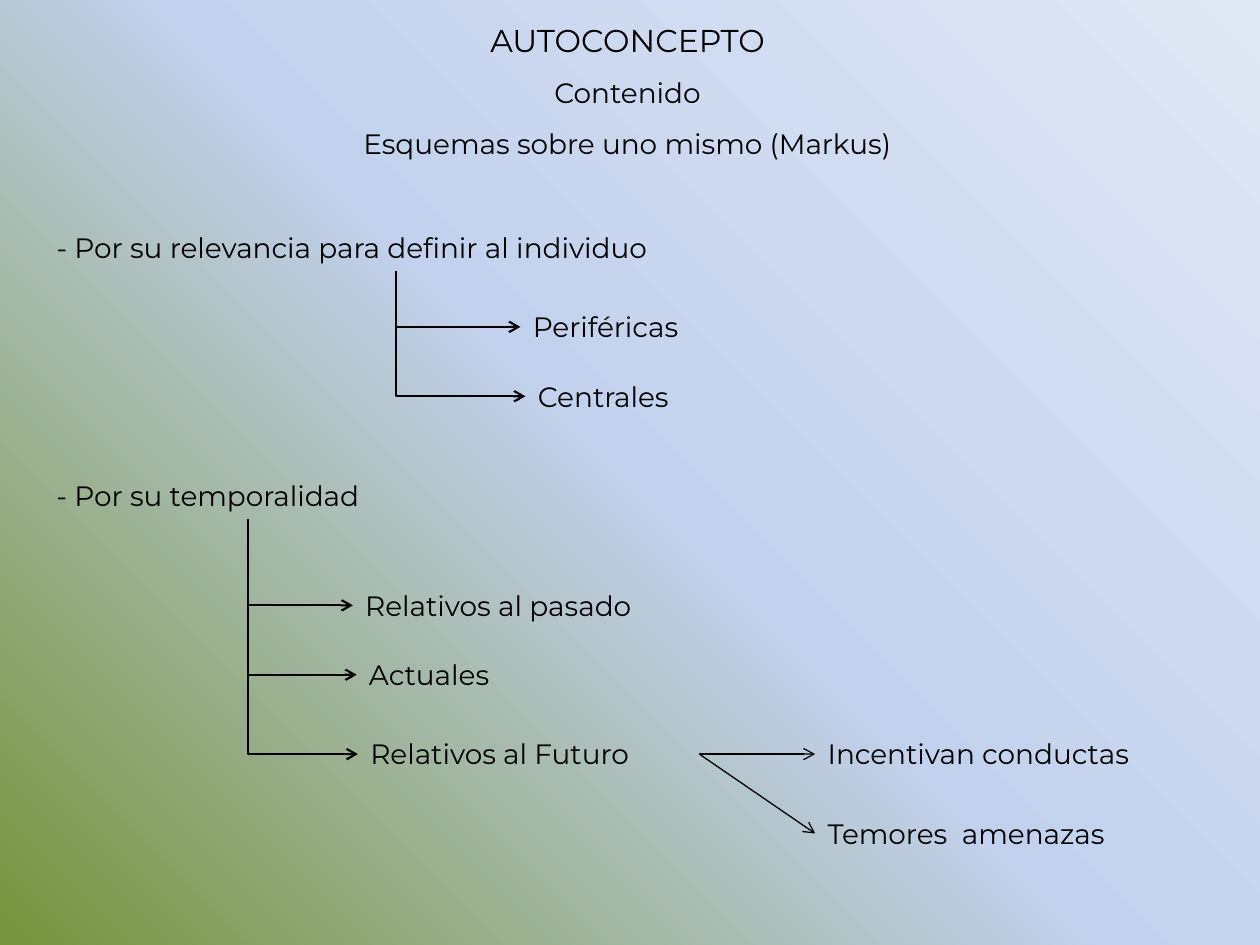
import pptx
import pptx.dml.color
import pptx.enum.shapes
import pptx.enum.text
import pptx.oxml
import pptx.oxml.ns
import pptx.util

Inches, Pt = pptx.util.Inches, pptx.util.Pt
Align = pptx.enum.text.PP_ALIGN
Kind = pptx.enum.shapes.MSO_CONNECTOR
qn = pptx.oxml.ns.qn
NS = pptx.oxml.ns.nsdecls("a")

FONT, INK = "Montserrat", "000000"
STOPS = [(0, "77933C"), (50, "C2D1ED"), (100, "E1E8F5")]
TITLE = [("AUTOCONCEPTO", 18), ("Contenido", 16),
         ("Esquemas sobre uno mismo (Markus)", 16)]
# Each text: words, left, top, width
GROUPS = [
    (("- Por su relevancia para definir al individuo", 0.35, 1.78, 5.59),
     [("Periféricas", 4.13, 2.41, 2.05),
      ("Centrales", 4.17, 2.96, 2.05)]),
    (("- Por su temporalidad", 0.35, 3.75, 3.23),
     [("Relativos al pasado", 2.8, 4.62, 4.33),
      ("Actuales", 2.83, 5.17, 4.53),
      ("Relativos al Futuro", 2.84, 5.8, 2.71)]),
]
EFFECTS = [("Incentivan conductas", 6.47, 5.8, 3.53),
           ("Temores  amenazas", 6.47, 6.43, 3.53)]
ROW = 0.37


def color(hexa):
    return pptx.dml.color.RGBColor.from_string(hexa)


def paint(slide):
    """Fill the background with a gradient centred on the lower left corner."""
    slide.background.fill.solid()
    back = slide.element.find(".//" + qn("p:bgPr"))
    stops = "".join(f'<a:gs pos="{pos * 1000}"><a:srgbClr val="{hexa}"/></a:gs>'
                    for pos, hexa in STOPS)
    grad = pptx.oxml.parse_xml(
        f'<a:gradFill {NS} rotWithShape="1"><a:gsLst>{stops}</a:gsLst>'
        '<a:path path="circle"><a:fillToRect t="100000" r="100000"/></a:path>'
        '</a:gradFill>')
    back.replace(back[0], grad)


def write(slide, lines, box, align, space=1.0):
    frame = slide.shapes.add_textbox(*map(Inches, box)).text_frame
    frame.word_wrap = True
    frame.auto_size = pptx.enum.text.MSO_AUTO_SIZE.SHAPE_TO_FIT_TEXT
    for i, (words, size) in enumerate(lines):
        para = frame.add_paragraph() if i else frame.paragraphs[0]
        para.alignment, para.line_spacing = align, space
        run = para.add_run()
        run.text = words
        run.font.name, run.font.size = FONT, Pt(size)
        run.font.color.rgb = color(INK)


def label(slide, item):
    words, left, top, width = item
    write(slide, [(words, 16)], (left, top, width, ROW), Align.JUSTIFY)


def arrow(slide, kind, start, end, weight):
    link = slide.shapes.add_connector(kind, *map(Inches, start + end))
    link.line.color.rgb = color(INK)
    link.line.width = Pt(weight)
    link.line._get_or_add_ln().append(
        pptx.oxml.parse_xml(f'<a:tailEnd {NS} type="arrow"/>'))
    link.element.spPr.append(pptx.oxml.parse_xml(f"<a:effectLst {NS}/>"))
    return link


def bend(slide, start, end):
    """Arrow that goes down, then right: a one-corner elbow turned by 270 degrees."""
    (x1, y1), (x2, y2) = start, end
    mx, my = (x1 + x2) / 2, (y1 + y2) / 2
    dx, dy = (x2 - x1) / 2, (y2 - y1) / 2
    link = arrow(slide, Kind.ELBOW, (mx + dy, my - dx), (mx - dy, my + dx), 1.25)
    shape = link.element.spPr
    shape.find(qn("a:prstGeom")).set("prst", "bentConnector2")
    shape.find(qn("a:xfrm")).set("rot", str(270 * 60000))


def entry(item):
    """Middle of the left edge of a label."""
    return item[1], item[2] + ROW / 2


def main():
    deck = pptx.Presentation()
    deck.slide_width, deck.slide_height = Inches(10), Inches(7.5)
    slide = deck.slides.add_slide(deck.slide_layouts[6])
    paint(slide)
    write(slide, TITLE, (1.89, -0.03, 6.18, 1.36), Align.CENTER, 1.5)
    for head, leaves in GROUPS:
        label(slide, head)
        root = head[1] + head[3] / 2, head[2] + ROW
        for leaf in leaves:
            bend(slide, root, entry(leaf))
            label(slide, leaf)
    last = GROUPS[-1][1][-1]
    x, y = entry(last)
    for item in EFFECTS:
        arrow(slide, Kind.STRAIGHT, (x + last[3], y), entry(item), 0.75)
        label(slide, item)
    deck.save("out.pptx")


if __name__ == "__main__":
    main()
